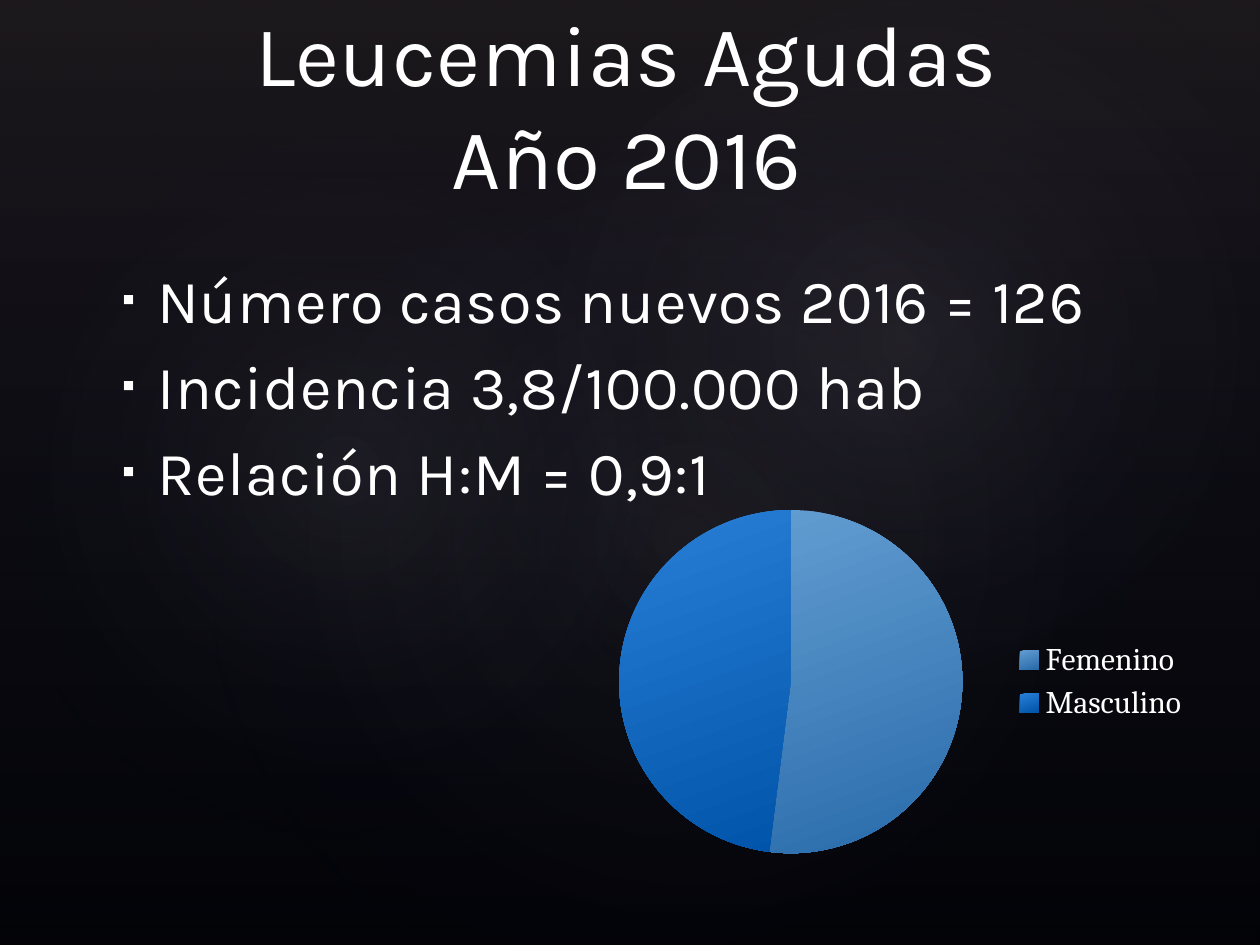
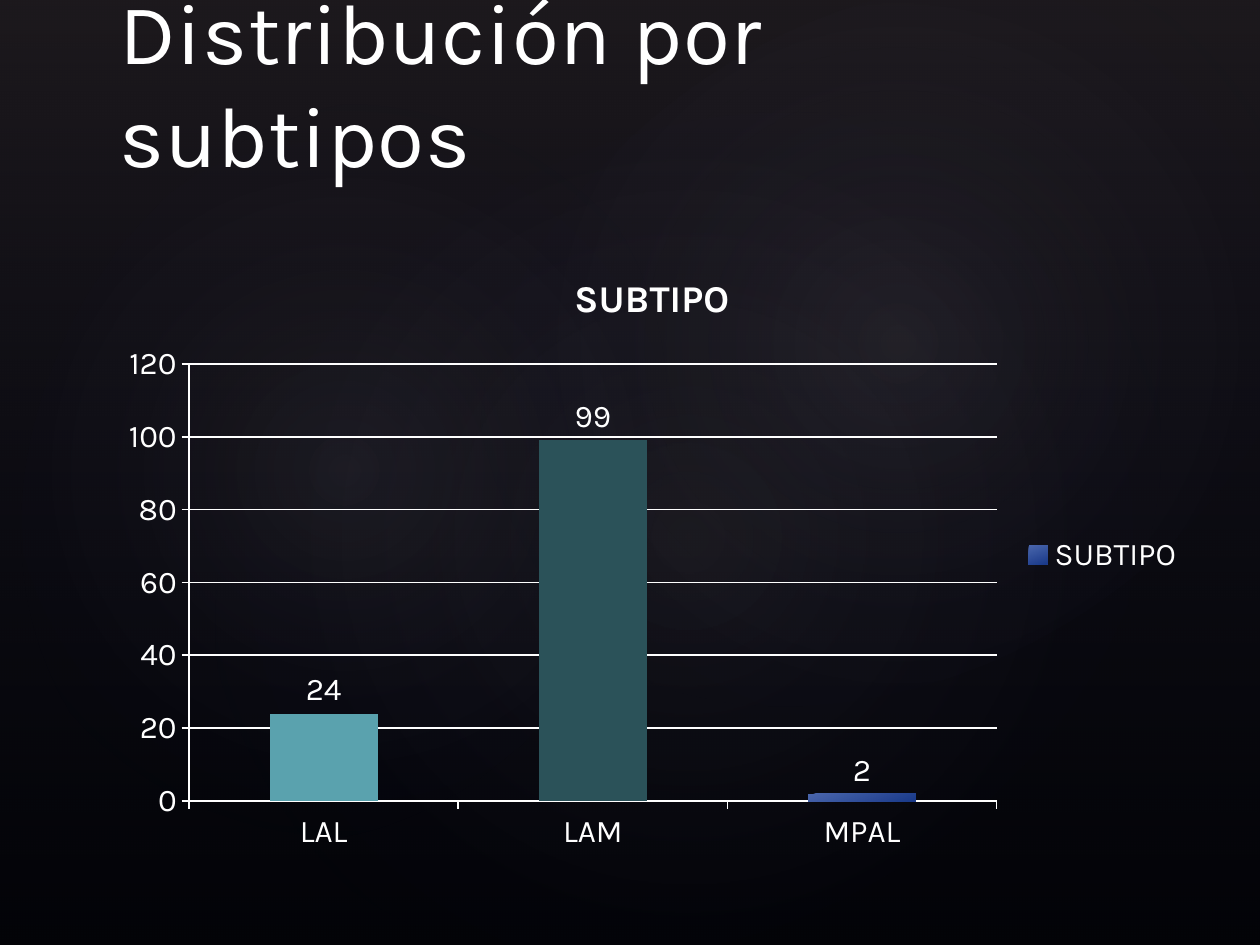
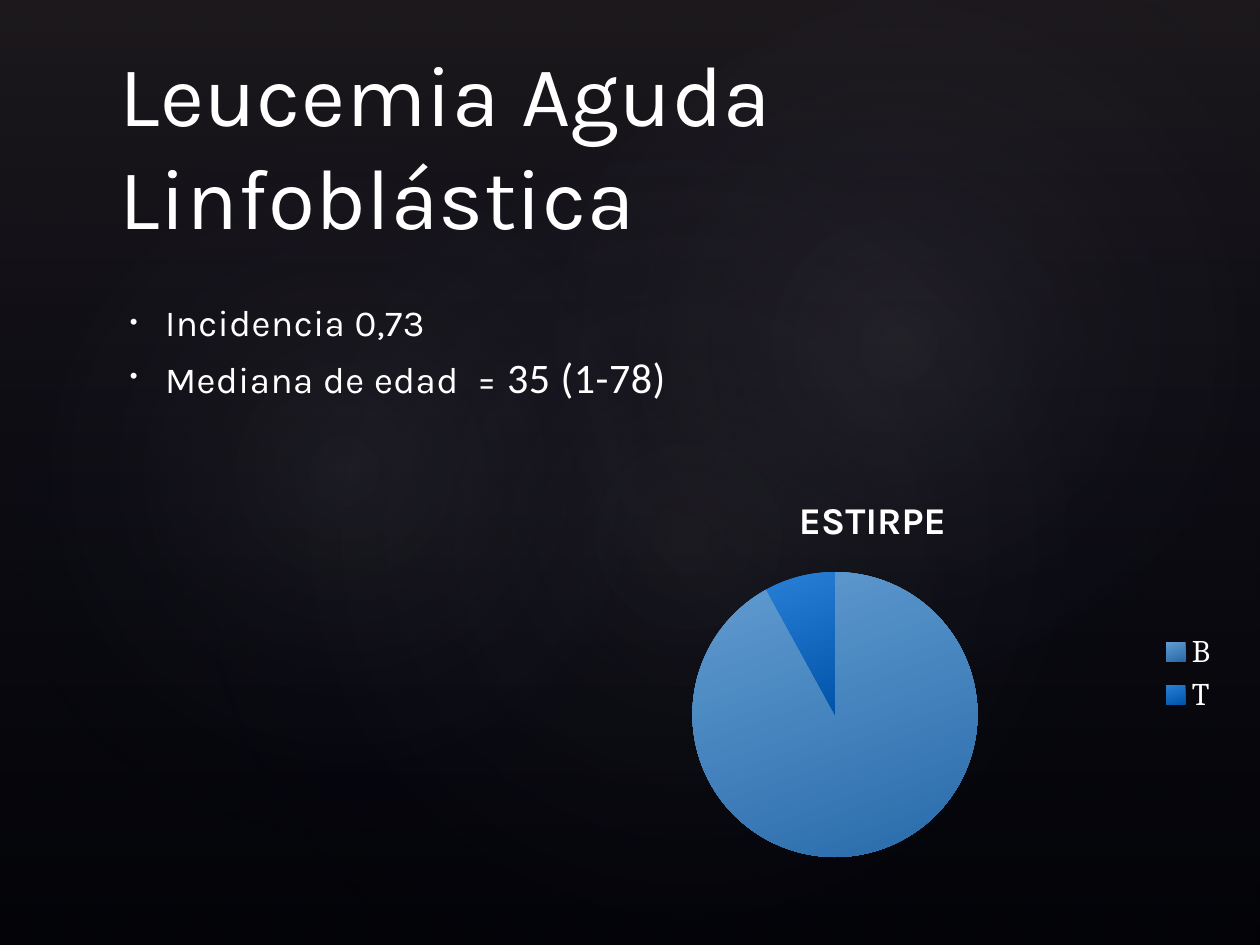
from pptx import Presentation
from pptx.chart.data import CategoryChartData
from pptx.dml.color import RGBColor
from pptx.enum.chart import (XL_CHART_TYPE, XL_LABEL_POSITION,
                             XL_LEGEND_POSITION, XL_TICK_MARK)
from pptx.enum.shapes import MSO_SHAPE
from pptx.enum.text import MSO_ANCHOR, MSO_AUTO_SIZE, PP_ALIGN
from pptx.oxml import parse_xml
from pptx.oxml.ns import nsdecls
from pptx.util import Pt

# Shared look
FONT = "Karla"
LEGEND_FONT = "Cambria"
WHITE = "FFFFFF"
CHART_SIZE = 18
TRACKING = 30  # hundredths of a point
LIGHT_BLUE = ("629DD1", "286AAA")
BRIGHT_BLUE = ("297FD5", "0055AA")
INDIGO = ("4A66AC", "1A3A8A")

# Glows behind the content: left, top, width, height, rotation, opacity
GLOWS = [
    (108, 82, 570, 449, 328.7, 7),
    (-21.6, 92, 436, 353, 294.3, 8),
    (258, 9.4, 510, 374, 328.7, 8),
]


def rgb(color):
    return RGBColor.from_string(color)


# Backdrop on the slide master
def fill_gradient(shape, stops, direction):
    shape.fill.solid()
    stop_xml = "".join(
        f'<a:gs pos="{pos * 1000}"><a:srgbClr val="{color}">'
        f'<a:alpha val="{opacity * 1000}"/></a:srgbClr></a:gs>'
        for pos, color, opacity in stops)
    gradient = parse_xml(f'<a:gradFill {nsdecls("a")} rotWithShape="1">'
                         f'<a:gsLst>{stop_xml}</a:gsLst>{direction}</a:gradFill>')
    solid = shape._element.spPr.find(".//{*}solidFill")
    solid.getparent().replace(solid, gradient)


def add_backdrop_layer(slide, preset, box, stops, direction, rotation=0):
    layer = slide.shapes.add_shape(preset, *map(Pt, box))
    layer.rotation = rotation
    layer.shadow.inherit = False
    layer.line.fill.background()
    fill_gradient(layer, stops, direction)
    # Move it to the master, under the placeholders
    master = slide.slide_layout.slide_master
    layer._element.nvSpPr.cNvPr.id = 20 + len(master.shapes)
    master.placeholders[0]._element.addprevious(layer._element)


def add_backdrop(slide):
    background = slide.slide_layout.slide_master.background.fill
    background.solid()
    background.fore_color.rgb = rgb("000000")
    add_backdrop_layer(slide, MSO_SHAPE.RECTANGLE, (0, 0, 720, 540),
                       [(0, "504652", 36), (100, "242852", 10)],
                       '<a:lin ang="5400000" scaled="0"/>')
    center = ('<a:path path="circle"><a:fillToRect l="50000" t="50000" '
              'r="50000" b="50000"/></a:path>')
    for *box, rotation, opacity in GLOWS:
        add_backdrop_layer(slide, MSO_SHAPE.OVAL, box,
                           [(0, "C4BCC6", opacity), (58, "242852", 0)],
                           center, rotation)


# Text
def place(placeholder, box, anchor):
    placeholder.left, placeholder.top, placeholder.width, placeholder.height = map(Pt, box)
    frame = placeholder.text_frame
    frame.word_wrap = True
    frame.auto_size = MSO_AUTO_SIZE.NONE
    frame.vertical_anchor = anchor
    return frame


def style_font(font, size, name=FONT, bold=False):
    font.name = name
    font.size = Pt(size)
    font.bold = bold
    font.color.rgb = rgb(WHITE)


def add_run(paragraph, text, size, name=FONT):
    run = paragraph.add_run()
    run.text = text
    style_font(run.font, size, name)
    run._r.get_or_add_rPr().set("spc", str(TRACKING))


def set_title(slide, lines, top, align=PP_ALIGN.LEFT):
    frame = place(slide.shapes.title, (61.2, top, 594, 72), MSO_ANCHOR.BOTTOM)
    heading = frame.paragraphs[0]
    heading.alignment = align
    for index, line in enumerate(lines):
        if index:
            heading.add_line_break()
        add_run(heading, line, 49)


def set_list(slide, box, items, size, bullet):
    """Each item is a list of (text, size, font) runs."""
    frame = place(slide.placeholders[1], box, MSO_ANCHOR.MIDDLE)
    for index, item in enumerate(items):
        paragraph = frame.add_paragraph() if index else frame.paragraphs[0]
        paragraph.space_before = Pt(size * 0.2)
        properties = paragraph._p.get_or_add_pPr()
        properties.set("marL", str(Pt(21.6)))
        properties.set("indent", str(Pt(-20.16)))
        for mark in ('buSzPct {} val="60000"', f'buChar {{}} char="{bullet}"'):
            properties.append(parse_xml(f'<a:{mark.format(nsdecls("a"))}/>'))
        for run in item:
            add_run(paragraph, *run)


# Charts
def fill_with_blend(part, colors):
    fill = part.format.fill
    fill.gradient()
    fill.gradient_angle = 290
    for stop, color in zip(fill.gradient_stops, colors):
        stop.color.rgb = rgb(color)


def add_data_chart(slide, kind, box, name, values, font, title=None):
    data = CategoryChartData()
    data.categories = list(values)
    data.add_series(name, list(values.values()))
    chart = slide.shapes.add_chart(kind, *map(Pt, box), data).chart
    style_font(chart.font, CHART_SIZE, font)
    chart.has_legend = True
    chart.legend.position = XL_LEGEND_POSITION.RIGHT
    chart.legend.include_in_layout = False
    chart.has_title = title is not None
    if title:
        run = chart.chart_title.text_frame.paragraphs[0].add_run()
        run.text = title
        style_font(run.font, CHART_SIZE * 1.2, bold=True)
    return chart


def add_pie(slide, box, name, values, title=None):
    chart = add_data_chart(slide, XL_CHART_TYPE.PIE, box, name, values,
                           LEGEND_FONT, title)
    chart.plots[0].vary_by_categories = True
    slices = chart.plots[0].series[0].points
    for index, colors in enumerate((LIGHT_BLUE, BRIGHT_BLUE)):
        fill_with_blend(slices[index], colors)


def add_columns(slide, box, name, values, point_colors):
    chart = add_data_chart(slide, XL_CHART_TYPE.COLUMN_CLUSTERED, box, name,
                           values, FONT, name)
    plot = chart.plots[0]
    plot.vary_by_categories = False
    plot.gap_width = 150
    subtypes = plot.series[0]
    subtypes.invert_if_negative = False
    fill_with_blend(subtypes, INDIGO)
    for index, color in enumerate(point_colors):
        fill = subtypes.points[index].format.fill
        fill.solid()
        fill.fore_color.rgb = rgb(color)
    # Value labels
    plot.has_data_labels = True
    plot.data_labels.show_value = True
    plot.data_labels.position = XL_LABEL_POSITION.OUTSIDE_END
    style_font(plot.data_labels.font, CHART_SIZE)
    # Axes and grid
    chart.value_axis.has_major_gridlines = True
    for axis in (chart.category_axis, chart.value_axis):
        axis.major_tick_mark = XL_TICK_MARK.OUTSIDE
    for ruled in (chart.category_axis, chart.value_axis,
                  chart.value_axis.major_gridlines):
        ruled.format.line.color.rgb = rgb(WHITE)
        ruled.format.line.width = Pt(1)


def main():
    deck = Presentation()
    deck.slide_width, deck.slide_height = Pt(720), Pt(540)
    list_layout, title_layout = deck.slide_layouts[1], deck.slide_layouts[5]

    # Acute leukaemias, 2016
    overview = deck.slides.add_slide(list_layout)
    add_backdrop(overview)
    set_title(overview, ["Leucemias Agudas", "Año 2016"], 49.7, PP_ALIGN.CENTER)
    facts = ["Número casos nuevos 2016 = 126", "Incidencia 3,8/100.000 hab",
             "Relación H:M = 0,9:1"]
    set_list(overview, (61.2, 140.4, 604, 159),
             [[(fact, 35)] for fact in facts], 35, "▪")
    add_pie(overview, (326.9, 281.5, 360, 216), "Series 1",
            {"Femenino": 52, "Masculino": 48})

    # Distribution by subtype
    distribution = deck.slides.add_slide(title_layout)
    set_title(distribution, ["Distribución por subtipos"], 37.4)
    add_columns(distribution, (61.2, 141, 622.8, 352), "SUBTIPO",
                {"LAL": 24, "LAM": 99, "MPAL": 2}, ["5AA2AE", "2B5259"])

    # Lymphoblastic leukaemia
    lymphoblastic = deck.slides.add_slide(list_layout)
    set_title(lymphoblastic, ["Leucemia Aguda Linfoblástica"], 72.7)
    set_list(lymphoblastic, (65.5, 167.8, 480, 65),
             [[("Incidencia 0,73", 21)],
              [("Mediana de edad  = ", 21), ("35 (1-78)", 24, "Calibri")]],
             21, "•")
    add_pie(lymphoblastic, (293.8, 270, 409.7, 229.7), "ESTIRPE",
            {"B": 92, "T": 8}, "ESTIRPE")

    deck.save("out.pptx")


if __name__ == "__main__":
    main()
